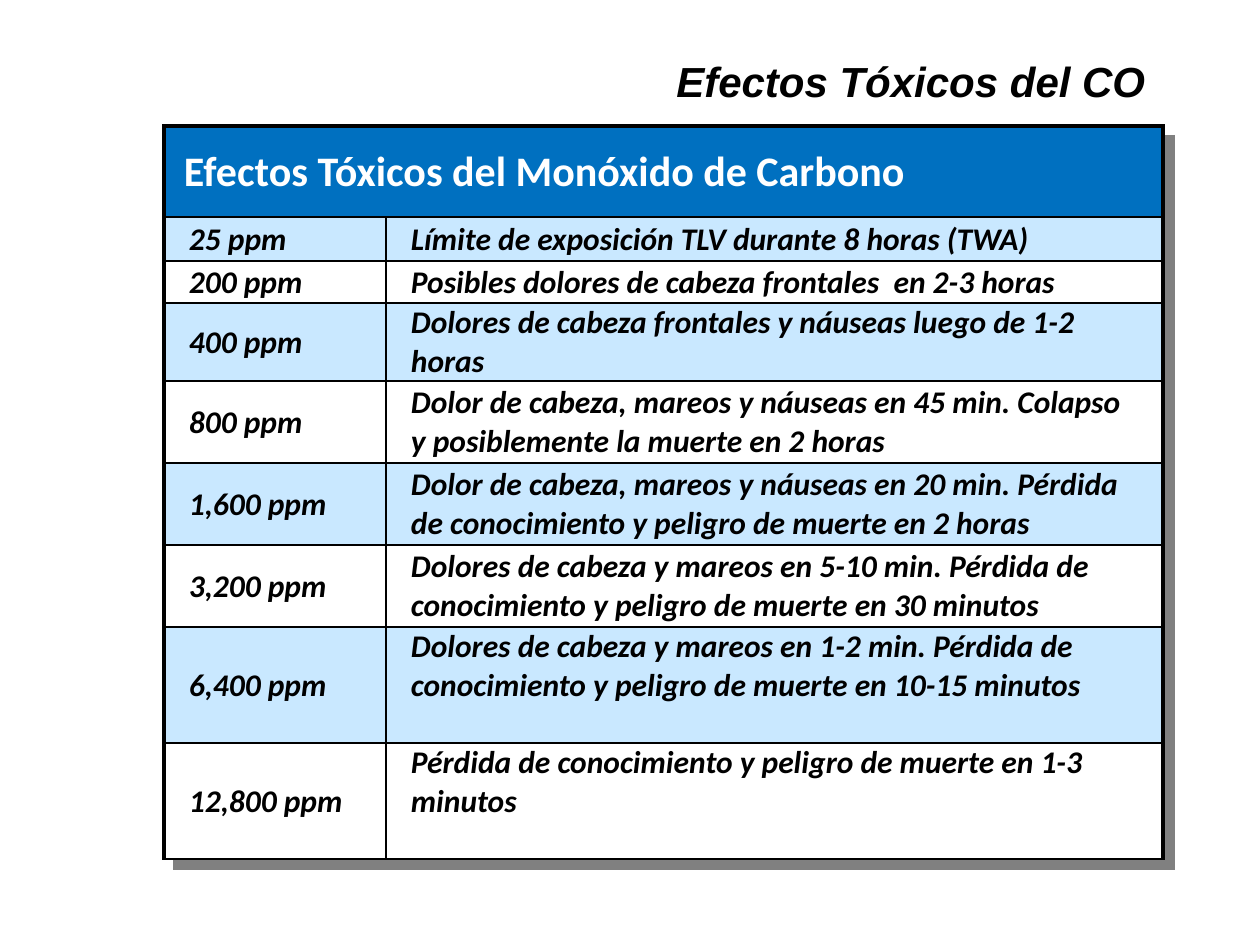
from lxml.etree import SubElement
from pptx import Presentation
from pptx.dml.color import RGBColor
from pptx.enum.text import MSO_ANCHOR as ANCHOR, MSO_AUTO_SIZE as AUTO, PP_ALIGN as ALIGN
from pptx.oxml import parse_xml
from pptx.oxml.ns import nsdecls, qn
from pptx.util import Pt

TITLE = "Efectos Tóxicos del CO"
HEADER = "Efectos Tóxicos del Monóxido de Carbono"
# concentration, effect, row height, space below the effect text
EFFECTS = [
    ("25 ppm", "Límite de exposición TLV durante 8 horas (TWA)", 44, 0),
    ("200 ppm", "Posibles dolores de cabeza frontales  en 2-3 horas", 42, 0),
    ("400 ppm", "Dolores de cabeza frontales y náuseas luego de 1-2 horas", 78, 0),
    ("800 ppm", "Dolor de cabeza, mareos y náuseas en 45 min. "
     "Colapso y posiblemente la muerte en 2 horas", 82, 0),
    ("1,600 ppm", "Dolor de cabeza, mareos y náuseas en 20 min. "
     "Pérdida de conocimiento y peligro de muerte en 2 horas", 82, 0),
    ("3,200 ppm", "Dolores de cabeza y mareos en 5-10 min. "
     "Pérdida de conocimiento y peligro de muerte en 30 minutos", 82, 0),
    ("6,400 ppm", "Dolores de cabeza y mareos en 1-2 min. "
     "Pérdida de conocimiento y peligro de muerte en 10-15 minutos", 116, 38),
    ("12,800 ppm", "Pérdida de conocimiento y peligro de muerte en 1-3 minutos", 116, 38),
]
COLORS = {"ink": "000000", "white": "FFFFFF", "header": "0070C0",
          "band": "C9E8FF", "shadow": "808080"}
HEADER_H = 91
COLUMNS = [222, 777]
LEFT, TOP = 164, 126


def px(n):
    return round(n * 914400 / 126)


def style(p, font, size, color, italic=True):
    for r in p.runs:
        f = r.font
        f.name, f.size, f.bold, f.italic = font, Pt(size), True, italic
        f.color.rgb = RGBColor.from_string(COLORS[color])


def add_borders(cell, widths):
    """Draw left, right, top and bottom lines; call before setting the fill."""
    tcPr = cell._tc.get_or_add_tcPr()
    for side, width in zip("LRTB", widths):
        ln = SubElement(tcPr, qn(f"a:ln{side}"), w=str(Pt(width)))
        fill = SubElement(ln, qn("a:solidFill"))
        SubElement(fill, qn("a:srgbClr"), val=COLORS["ink"])


def format_cell(cell, text, fill, borders, left, right, bottom=0):
    cell.text = text
    cell.vertical_anchor = ANCHOR.MIDDLE
    cell.margin_left, cell.margin_right = px(left), px(right)
    cell.margin_top, cell.margin_bottom = px(1), px(bottom)
    add_borders(cell, borders)
    cell.fill.solid()
    cell.fill.fore_color.rgb = RGBColor.from_string(COLORS[fill])


def add_title(s):
    title = s.shapes.title
    title.left, title.top, title.width, title.height = map(px, (227, 0, 931, 112))
    tf = title.text_frame
    tf.text = TITLE
    tf.auto_size = AUTO.NONE
    tf.vertical_anchor = ANCHOR.BOTTOM
    p = tf.paragraphs[0]
    p.alignment = ALIGN.RIGHT
    style(p, "Arial", 24, "ink")


def add_effects_table(s):
    heights = [HEADER_H] + [row[2] for row in EFFECTS]
    frame = s.shapes.add_table(len(heights), len(COLUMNS), px(LEFT), px(TOP),
                               px(sum(COLUMNS)), px(sum(heights)))
    table = frame.table
    table.first_row = table.horz_banding = False
    table._tbl.tblPr.insert(0, parse_xml(
        f'<a:effectLst {nsdecls("a")}><a:outerShdw dist="107763" dir="2700000" '
        f'algn="ctr" rotWithShape="0"><a:srgbClr val="{COLORS["shadow"]}"/>'
        '</a:outerShdw></a:effectLst>'))
    for col, width in zip(table.columns, COLUMNS):
        col.width = px(width)
    for row, height in zip(table.rows, heights):
        row.height = px(height)

    header = table.cell(0, 0)
    header.merge(table.cell(0, 1))
    format_cell(header, HEADER, "header", (2.25, 2.25, 2.25, 1), 20, 1)
    add_borders(table.cell(0, 1), (2.25, 2.25, 2.25, 1))
    style(header.text_frame.paragraphs[0], "Calibri", 24, "white", italic=False)

    for i, (level, effect, _, space) in enumerate(EFFECTS, 1):
        fill = "band" if i % 2 else "white"
        below = 1.5 if i == len(EFFECTS) else 1
        cells = table.cell(i, 0), table.cell(i, 1)
        format_cell(cells[0], level, fill, (2.25, 1, 1, below), 25, 25)
        format_cell(cells[1], effect, fill, (1, 2.25, 1, below), 25, 25, space)
        for cell in cells:
            style(cell.text_frame.paragraphs[0], "Calibri", 18, "ink")


def main():
    prs = Presentation()
    prs.slide_width, prs.slide_height = px(1260), px(945)
    s = prs.slides.add_slide(prs.slide_layouts[5])
    add_title(s)
    add_effects_table(s)
    prs.save("out.pptx")


if __name__ == "__main__":
    main()
